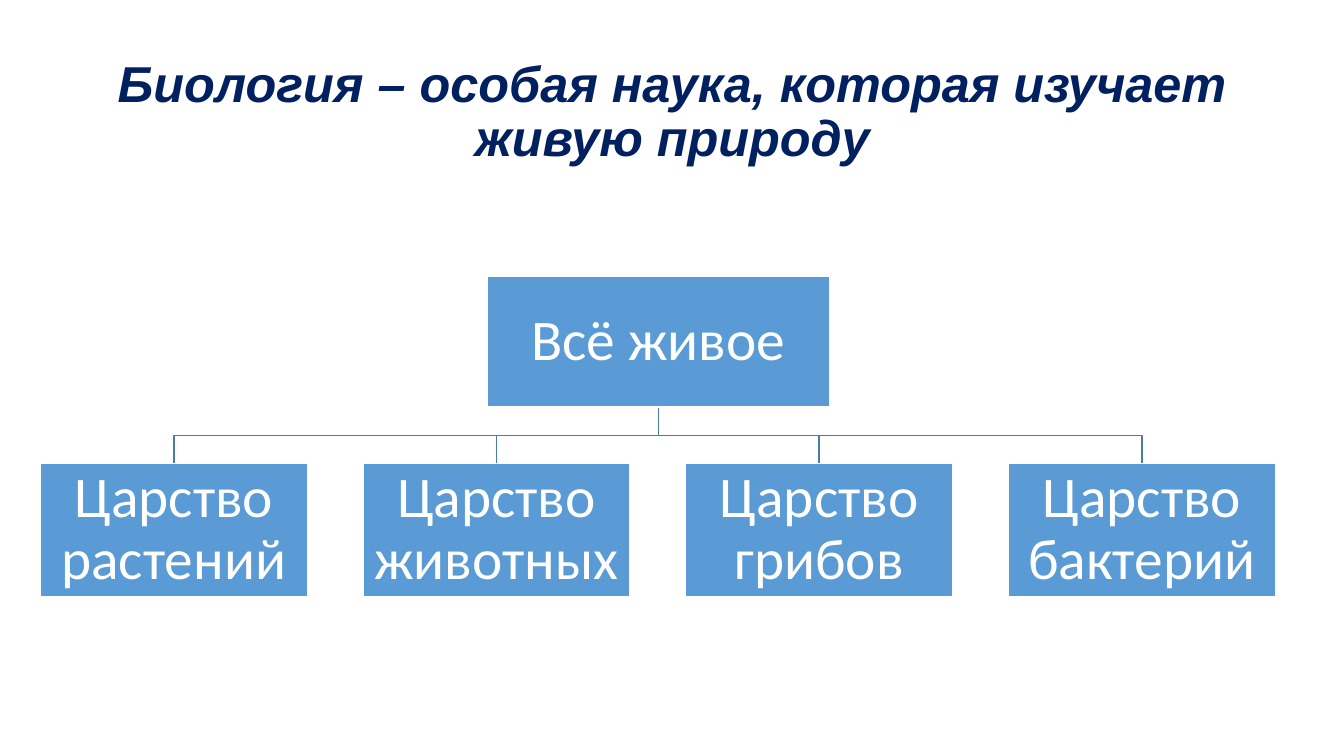
import pptx
import pptx.util
import pptx.dml.color
import pptx.enum.shapes
import pptx.enum.text

Inches = pptx.util.Inches
Pt = pptx.util.Pt
RGBColor = pptx.dml.color.RGBColor

NAVY = RGBColor(0x00, 0x20, 0x60)
BLUE = RGBColor(0x5B, 0x9B, 0xD5)
STEEL = RGBColor(0x49, 0x7C, 0xAB)
WHITE = RGBColor(0xFF, 0xFF, 0xFF)

ROOT_LEFT, ROOT_TOP, ROOT_WIDTH, ROOT_HEIGHT = 4.83, 2.74, 3.4, 1.3
KINGDOM_LEFT, KINGDOM_TOP, KINGDOM_WIDTH, KINGDOM_HEIGHT = 0.4, 4.6, 2.65, 1.32
KINGDOM_STEP = 3.2
KINGDOMS = ["растений", "животных", "грибов", "бактерий"]


class Deck:
    """Holds the text style and the slide being built."""

    def __init__(self):
        self.prs = pptx.Presentation()
        self.prs.slide_width = Inches(13.33)
        self.prs.slide_height = Inches(7.5)
        self.s = self.prs.slides.add_slide(self.prs.slide_layouts[5])

    def add_text(self, tf, text, font, size, color, strong=False):
        tf.word_wrap = True
        tf.auto_size = pptx.enum.text.MSO_AUTO_SIZE.NONE
        tf.vertical_anchor = pptx.enum.text.MSO_ANCHOR.MIDDLE
        p = tf.paragraphs[0]
        p.alignment = pptx.enum.text.PP_ALIGN.CENTER
        p.line_spacing = 0.9
        r = p.add_run()
        r.text = text
        r.font.name = font
        r.font.size = Pt(size)
        r.font.color.rgb = color
        r.font.bold = r.font.italic = strong

    def title(self, text, left, top, width, height):
        sp = self.s.shapes.title
        sp.left, sp.top = Inches(left), Inches(top)
        sp.width, sp.height = Inches(width), Inches(height)
        self.add_text(sp.text_frame, text, "Arial", 36, NAVY, strong=True)

    def branch(self, x1, y1, x2, y2):
        """Draws a line that goes down, across and down again."""
        middle = (y1 + y2) / 2
        points = [(x1, middle), (x2, middle), (x2, y2)]
        builder = self.s.shapes.build_freeform(Inches(x1), Inches(y1))
        builder.add_line_segments(
            [(Inches(x), Inches(y)) for x, y in points], close=False)
        sp = builder.convert_to_shape()
        sp.shadow.inherit = False
        sp.fill.background()
        sp.line.color.rgb = STEEL
        sp.line.width = Pt(1)

    def box(self, text, left, top, width, height):
        sp = self.s.shapes.add_shape(
            pptx.enum.shapes.MSO_SHAPE.RECTANGLE,
            Inches(left), Inches(top), Inches(width), Inches(height))
        sp.shadow.inherit = False
        sp.fill.solid()
        sp.fill.fore_color.rgb = BLUE
        sp.line.color.rgb = WHITE
        sp.line.width = Pt(1)
        tf = sp.text_frame
        tf.margin_left = tf.margin_right = Inches(0.03)
        tf.margin_top = tf.margin_bottom = Inches(0.03)
        self.add_text(tf, text, "Calibri", 41, WHITE)


def main():
    deck = Deck()
    deck.title("Биология – особая наука, которая изучает живую природу",
               0.92, 0.4, 11.5, 1.45)

    lefts = [KINGDOM_LEFT + i * KINGDOM_STEP for i in range(len(KINGDOMS))]
    for left in lefts:
        deck.branch(ROOT_LEFT + ROOT_WIDTH / 2, ROOT_TOP + ROOT_HEIGHT,
                    left + KINGDOM_WIDTH / 2, KINGDOM_TOP)

    deck.box("Всё живое", ROOT_LEFT, ROOT_TOP, ROOT_WIDTH, ROOT_HEIGHT)
    for left, kingdom in zip(lefts, KINGDOMS):
        deck.box(f"Царство {kingdom}",
                 left, KINGDOM_TOP, KINGDOM_WIDTH, KINGDOM_HEIGHT)

    deck.prs.save("out.pptx")


if __name__ == "__main__":
    main()
